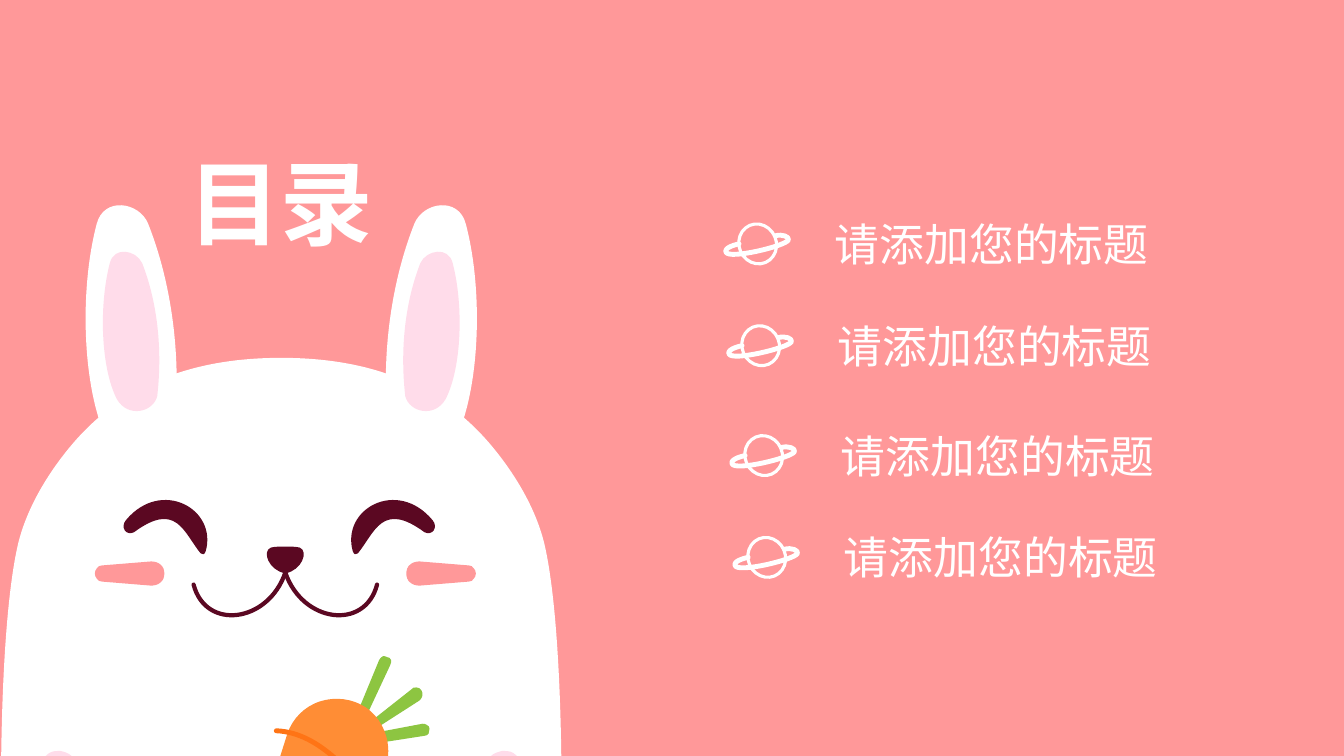
import itertools
import math

import lxml.etree
import pptx
import pptx.dml.color
import pptx.enum.shapes
import pptx.enum.text
import pptx.oxml.ns
import pptx.util

PX = 9144  # EMU in one px, 100 px to the inch
FONT = "Noto Sans CJK JP"
PINK, WHITE, PALE, WINE = "FF9899", "FFFFFF", "FFDCEA", "5B0822"
LEAF, ROOT, CREASE = "8DC541", "FF8D35", "FF7415"


def tint(code):
    return pptx.dml.color.RGBColor.from_string(code)


def tag(name):
    return pptx.oxml.ns.qn("a:" + name)


# Outlines are lists of points: a start, then two handles and an end per curve.

def flip(points, axis):
    """Mirror points left to right about the line x = axis."""
    return [(2 * axis - x, y) for x, y in points]


def whole(half, axis):
    """Close a left half, drawn from top to bottom, with its mirror."""
    return half + flip(half, axis)[-2::-1]


def shrink(points, centre, rate):
    return [tuple(c + rate * (p - c) for p, c in zip(point, centre)) for point in points]


def arc(ball, start, stop, parts=4):
    """Curves along the rim of a ball (x, y, radius) between two angles."""
    x, y, radius = ball
    step = (stop - start) / parts
    pull = 4 / 3 * math.tan(step / 4)

    def rim(angle, lean):
        cos, sin = math.cos(angle), math.sin(angle)
        return x + radius * (cos - lean * sin), y + radius * (sin + lean * cos)

    points = [rim(start, 0)]
    for part in range(parts):
        low = start + part * step
        points += [rim(low, pull), rim(low + step, -pull), rim(low + step, 0)]
    return points


def drop(tail, head):
    """Wrap two balls in one band: a capsule that widens to its head."""
    across, down = head[0] - tail[0], head[1] - tail[1]
    aim = math.atan2(down, across)
    turn = math.acos((tail[2] - head[2]) / math.hypot(across, down))
    front = arc(head, aim - turn, aim + turn)
    rear = arc(tail, aim + turn, aim - turn + 2 * math.pi)
    return front + [front[-1], rear[0]] + rear + [rear[-1], front[0], front[0]]


def paint(shape, fill=None, line=None, width=0):
    shape.shadow.inherit = False
    for part, code in ((shape.fill, fill), (shape.line.fill, line)):
        if code:
            part.solid()
            part.fore_color.rgb = tint(code)
        else:
            part.background()
    if line:
        shape.line.width = pptx.util.Pt(width)
        shape.element.spPr.find(tag("ln")).set("cap", "rnd")


def draw(group, points, at, **look):
    """Draw an outline; it is closed when it ends where it began."""
    spots = [(round(x + at[0]), round(y + at[1])) for x, y in points]
    pen = group.shapes.build_freeform(*spots[0], scale=PX)
    pen.add_line_segments(spots[1:], close=spots[0] == spots[-1])
    shape = pen.convert_to_shape()
    paint(shape, **look)
    steps = list(shape.element.iter(tag("lnTo")))
    for first, second, end in zip(steps[::3], steps[1::3], steps[2::3]):
        first.tag = tag("cubicBezTo")
        for step in (second, end):
            first.append(step[0])
            step.getparent().remove(step)


def twins(group, points, axis, at, **look):
    """Draw a left part and its mirror on the right."""
    for side in (points, flip(points, axis)):
        draw(group, side, at, **look)


def torso(group, at):
    crown, hip, foot = (279, 355), (1, 787), (60, 935)
    half = [crown, (190, 355), (123, 382), (74, 438),
            (48, 468), (25, 506), (17, 544),
            (5, 600), (1, 700), hip,
            (2, 850), (10, 940), foot,
            (110, 966), (200, 967), (279, 965)]
    draw(group, whole(half, crown[0]), at, fill=WHITE)
    twins(group, drop((58, 763, 18), (100, 835, 40)), crown[0], at, fill=PALE)


def ears(group, at):
    ear = [(147, 222), (138, 200), (103, 195), (96, 222),
           (78, 290), (82, 390), (108, 440),
           (125, 470), (165, 460), (172, 435),
           (182, 350), (168, 275), (147, 222)]
    twins(group, ear, 279, at, fill=WHITE)
    twins(group, shrink(ear, (130, 325), 0.62), 279, at, fill=PALE)


def face(group, at):
    eye = [(125, 516), (160, 474), (216, 505), (204, 547),
           (203, 550), (201, 551), (199, 549),
           (182, 528), (175, 497), (133, 528),
           (125, 532), (119, 523), (125, 516)]
    cheek = drop((102, 569, 8), (151, 569, 12))
    smile = [(192, 580), (204, 626), (266, 618), (283, 568)]
    nose = [(283, 543), (278, 543), (273, 543), (269, 544),
            (261, 547), (267, 565), (283, 568)]
    twins(group, eye, 277, at, fill=WINE)
    twins(group, cheek, 283, at, fill=PINK)
    twins(group, smile, 283, at, line=WINE, width=3)
    draw(group, whole(nose, 283), at, fill=WINE, line=WINE, width=1.13)


def carrot(group, at):
    leaves = (((354, 720, 4), (382, 657, 6)),
              ((358, 728, 4), (412, 689, 7)),
              ((362, 734, 5), (420, 724, 6)))
    for stem, tip in leaves:
        draw(group, drop(stem, tip), at, fill=LEAF)
    draw(group, drop((262, 850, 15), (334, 744, 51)), at, fill=ROOT)
    crease = [(274, 725), (297, 726), (316, 738), (332, 752)]
    draw(group, crease, at, line=CREASE, width=3.5)


def rabbit(slide, at):
    group = slide.shapes.add_group_shape()
    for part in (torso, ears, face, carrot):
        part(group, at)


def planet(slide, at):
    group = slide.shapes.add_group_shape()
    left, top = at
    oval = pptx.enum.shapes.MSO_SHAPE.OVAL
    globe = group.shapes.add_shape(
        oval, (left + 14) * PX, (top + 12) * PX, 37 * PX, 40 * PX)
    globe.rotation = 337
    paint(globe, PINK, WHITE, 2.25)
    ring = [(50, 24), (57, 22), (64, 25), (63, 28),
            (61, 34), (3, 48), (1, 40),
            (-1, 35), (14, 32), (14, 32)]
    draw(group, ring, at, line=WHITE, width=3.5)


def write(holder, box, text, look, space=1.0):
    """Move a placeholder to the box and fill it with one plain line."""
    frame = holder.text_frame
    frame.text = text
    para = frame.paragraphs[0]
    font = para.runs[0].font
    kinds = pptx.enum.text
    sides = ("left", "top", "width", "height")
    formats = (
        (holder, {side: size * PX for side, size in zip(sides, box)}),
        (frame, {"word_wrap": True, "auto_size": kinds.MSO_AUTO_SIZE.SHAPE_TO_FIT_TEXT,
                 "vertical_anchor": kinds.MSO_ANCHOR.TOP}),
        (para, {"alignment": kinds.PP_ALIGN.JUSTIFY, "line_spacing": space,
                "space_before": pptx.util.Pt(0)}),
        (font, {"name": FONT, **look}))
    for item, values in formats:
        for name, value in values.items():
            setattr(item, name, value)
    font.color.rgb = tint(WHITE)
    props = para._p.get_or_add_pPr()
    for name in ("marL", "indent"):
        props.set(name, "0")
    lxml.etree.SubElement(props, tag("buNone"))
    east = lxml.etree.Element(tag("ea"), typeface=FONT)
    font._element.find(tag("latin")).addnext(east)


def entry(slide, holder, box, text):
    """Place a planet and, to its right, one line of the contents."""
    left, top, width, height = box
    inset = 99
    planet(slide, (left, top))
    write(holder, (left + inset, top, width - inset, height), text,
          {"size": pptx.util.Pt(32), "bold": False})


def agenda(slide, holders, box):
    """Stack the entries, each a little to the right, in two pairs."""
    left, top, width, height = box
    shift, pitch, gap = 3, 101, 8
    for row, holder in zip(itertools.count(), holders):
        spot = left + shift * row, top + pitch * row + gap * (row // 2)
        entry(slide, holder, (*spot, width, height), "请添加您的标题")


def main():
    deck = pptx.Presentation()
    deck.slide_width, deck.slide_height = 1333 * PX, 750 * PX
    comparison = deck.slide_layouts[4]  # a title and four bodies
    slide = deck.slides.add_slide(comparison)
    back = slide.background.fill
    back.solid()
    back.fore_color.rgb = tint(PINK)
    title, *bodies = slide.placeholders
    rabbit(slide, (0, 0))
    write(title, (177, 118, 241, 131), "目录",
          {"size": pptx.util.Pt(66), "bold": True}, 1.2)
    agenda(slide, bodies, (719, 210, 485, 64))
    deck.save("out.pptx")


if __name__ == "__main__":
    main()
